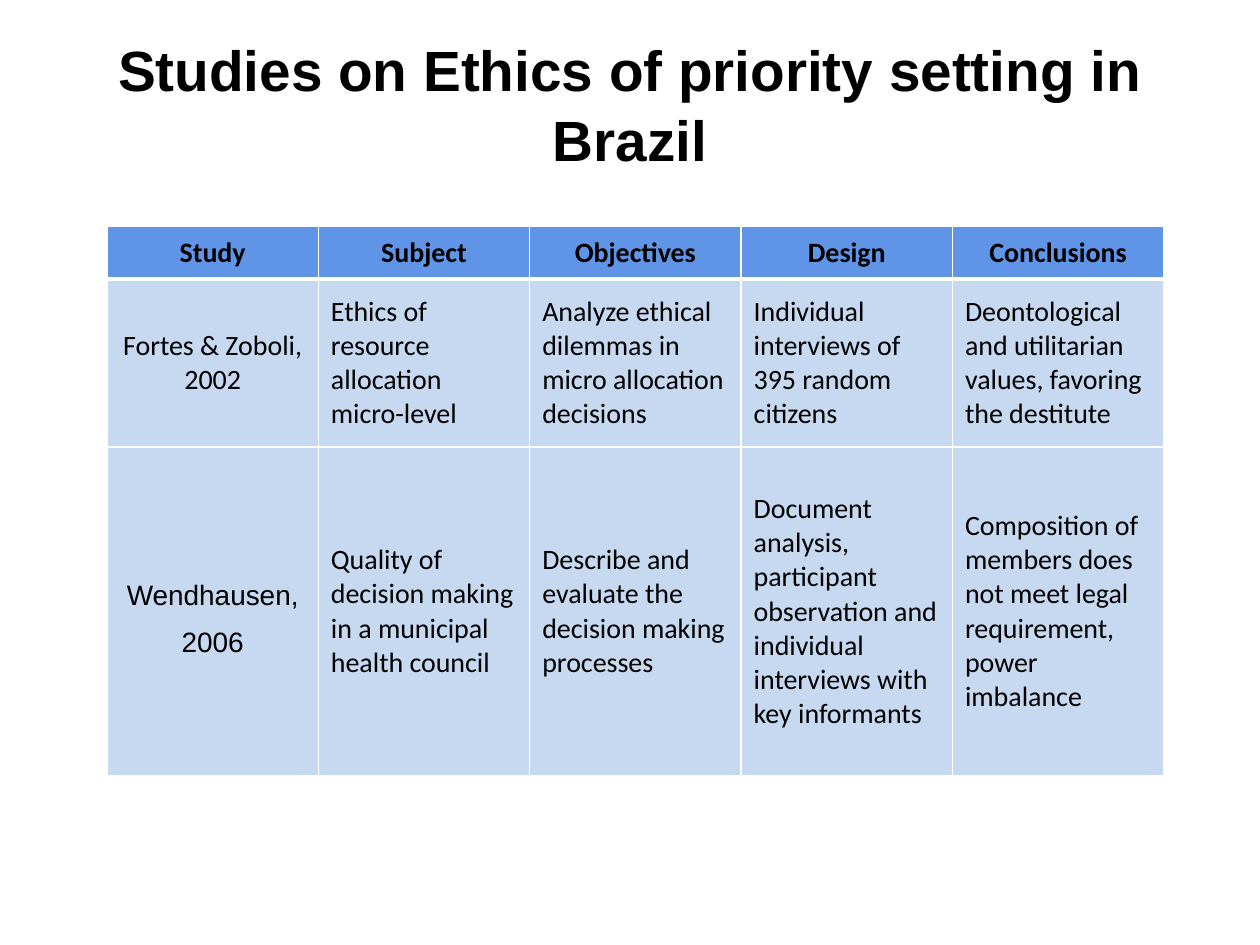
from dataclasses import dataclass

from lxml import etree
from pptx import Presentation
from pptx.dml.color import RGBColor
from pptx.enum.text import MSO_ANCHOR, PP_ALIGN
from pptx.oxml.ns import qn
from pptx.util import Emu, Pt

MIDDLE = MSO_ANCHOR.MIDDLE
LEFT, CENTER = PP_ALIGN.LEFT, PP_ALIGN.CENTER
EMU_PER_PX = 914400 / 126


@dataclass(frozen=True)
class Theme:
    text: str = "000000"
    header_fill: str = "6094E7"
    body_fill: str = "C6D9F1"
    border: str = "FFFFFF"
    title_font: str = "Arial"
    table_font: str = "Calibri"
    title_size: float = 32.4
    table_size: int = 16
    thin: int = 1
    thick: int = 3


THEME = Theme()
TITLE = "Studies on Ethics of priority setting in Brazil"
STUDIES = [
    ["Study", "Subject", "Objectives", "Design", "Conclusions"],
    [
        "Fortes & Zoboli, 2002",
        "Ethics of resource allocation micro-level",
        "Analyze ethical dilemmas in micro allocation decisions",
        "Individual interviews of 395 random citizens",
        "Deontological and utilitarian values, favoring the destitute",
    ],
    [
        "Wendhausen, 2006",
        "Quality of decision making in a municipal health council",
        "Describe and evaluate the decision making processes",
        "Document analysis, participant observation and individual "
        "interviews with key informants",
        "Composition of members does not meet legal requirement, "
        "power imbalance",
    ],
]
ROW_HEIGHTS = [53, 168, 329]


def px(length):
    return Emu(round(length * EMU_PER_PX))


def style_paragraph(para, font_name, size, bold, align):
    para.alignment = align
    para.font.name = font_name
    para.font.size = Pt(size)
    para.font.bold = bold
    para.font.color.rgb = RGBColor.from_string(THEME.text)


def add_title(page, left, top, width, height):
    box = page.shapes.add_textbox(px(left), px(top), px(width), px(height))
    frame = box.text_frame
    frame.word_wrap = True
    frame.vertical_anchor = MIDDLE
    frame.margin_top = 0
    frame.margin_bottom = px(64)
    para = frame.paragraphs[0]
    para.text = TITLE
    para.line_spacing = 1.04
    style_paragraph(para, THEME.title_font, THEME.title_size, True, CENTER)


def set_borders(cell, top, bottom):
    """Draw all four cell edges; call before the fill, which must follow them."""
    properties = cell._tc.get_or_add_tcPr()
    widths = {"lnL": THEME.thin, "lnR": THEME.thin, "lnT": top, "lnB": bottom}
    for edge, width in widths.items():
        line = etree.SubElement(properties, qn(f"a:{edge}"), w=str(Pt(width)))
        fill = etree.SubElement(line, qn("a:solidFill"))
        etree.SubElement(fill, qn("a:srgbClr"), val=THEME.border)


def fill_cell(cell, text, row, column):
    is_header = row == 0
    set_borders(
        cell,
        top=THEME.thick if row == 1 else THEME.thin,
        bottom=THEME.thick if is_header else THEME.thin,
    )
    cell.fill.solid()
    color = THEME.header_fill if is_header else THEME.body_fill
    cell.fill.fore_color.rgb = RGBColor.from_string(color)
    cell.vertical_anchor = MIDDLE
    para = cell.text_frame.paragraphs[0]
    para.text = text
    align = CENTER if is_header or column == 0 else LEFT
    style_paragraph(para, THEME.table_font, THEME.table_size, is_header, align)


def add_studies_table(page, left, top, width):
    table = page.shapes.add_table(
        len(STUDIES), len(STUDIES[0]),
        px(left), px(top), px(width), px(sum(ROW_HEIGHTS)),
    ).table
    for column in table.columns:
        column.width = px(width / len(STUDIES[0]))
    for row, height in zip(table.rows, ROW_HEIGHTS):
        row.height = px(height)
    for row, texts in enumerate(STUDIES):
        for column, text in enumerate(texts):
            fill_cell(table.cell(row, column), text, row, column)

    last_study = table.cell(2, 0).text_frame.paragraphs[0]
    last_study.font.name = THEME.title_font
    last_study.line_spacing = 1.5
    last_study.space_before = Pt(12)


def main():
    deck = Presentation()
    deck.slide_width, deck.slide_height = px(1260), px(945)
    page = deck.slides.add_slide(deck.slide_layouts[6])
    add_title(page, 63, 39, 1134, 191)
    add_studies_table(page, 107, 226, 1057)
    deck.save("out.pptx")


if __name__ == "__main__":
    main()
